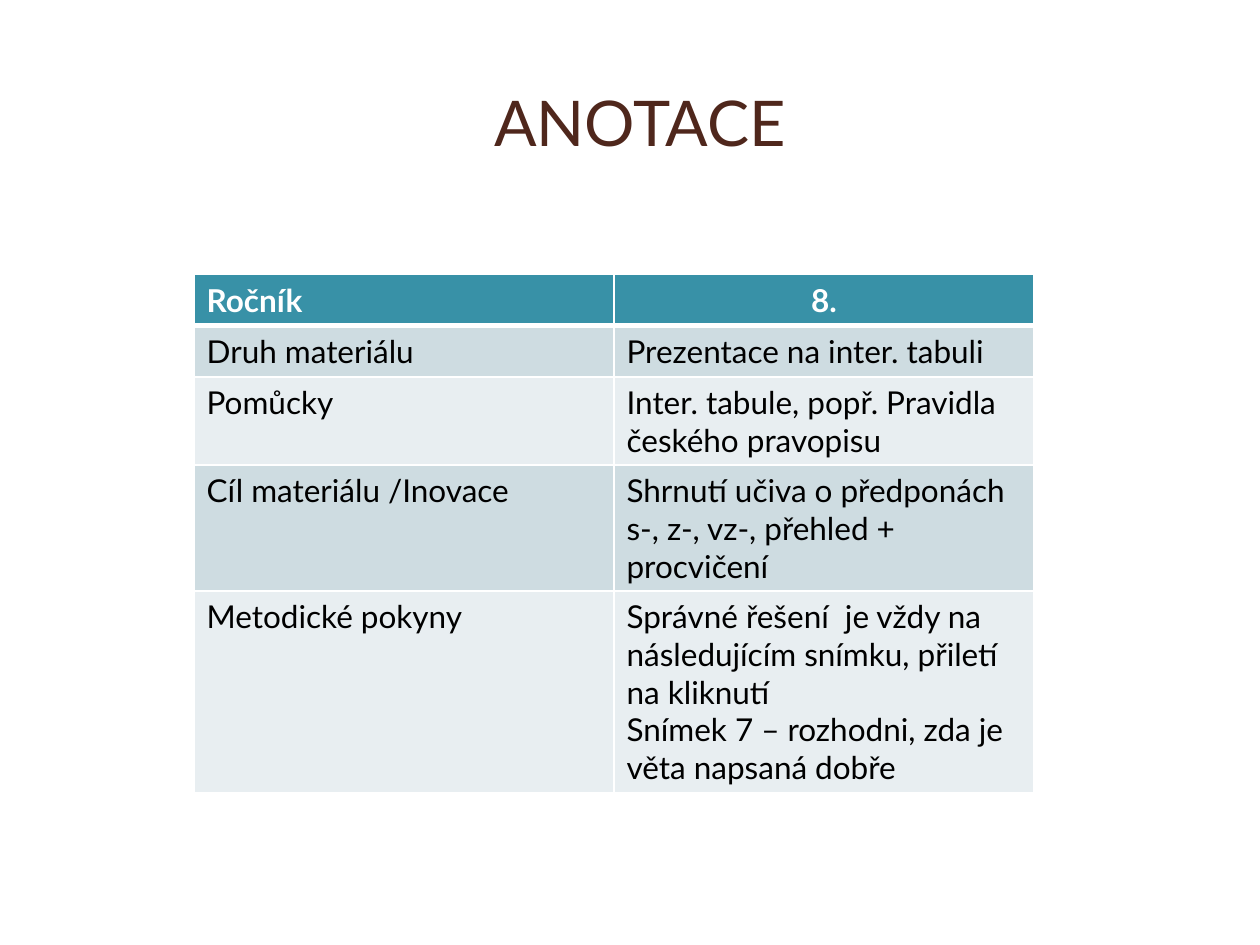
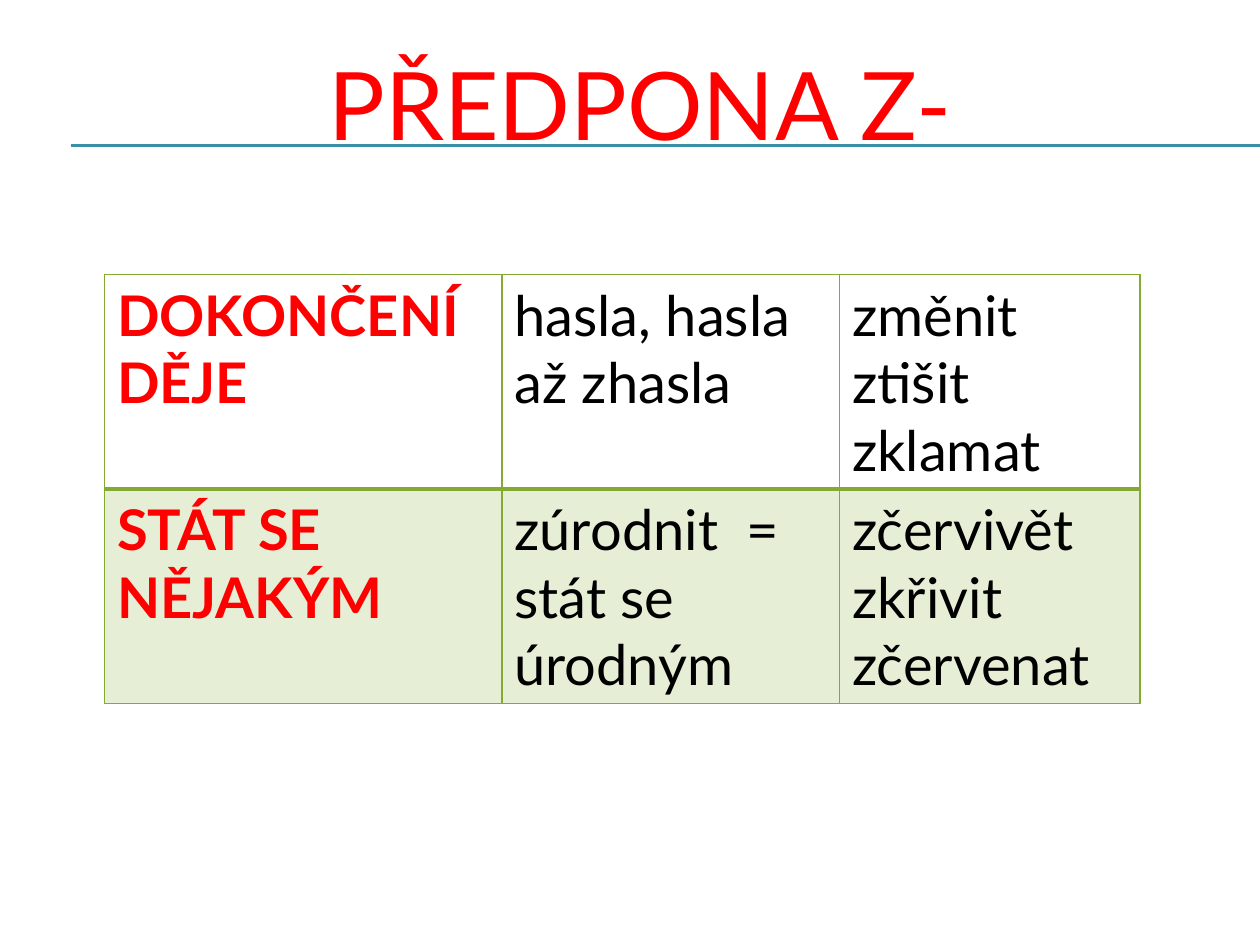
from lxml import etree
from pptx import Presentation
from pptx.dml.color import RGBColor
from pptx.enum.shapes import MSO_CONNECTOR
from pptx.enum.text import MSO_ANCHOR, PP_ALIGN
from pptx.oxml.ns import qn
from pptx.util import Pt

CENTER, LEFT = PP_ALIGN.CENTER, PP_ALIGN.LEFT
MIDDLE = MSO_ANCHOR.MIDDLE
STRAIGHT = MSO_CONNECTOR.STRAIGHT

FONT = "Lato"
WHITE = RGBColor(0xFF, 0xFF, 0xFF)
BLACK = RGBColor(0x00, 0x00, 0x00)
RED = RGBColor(0xFF, 0x00, 0x00)
BROWN = RGBColor(0x4F, 0x27, 0x1C)
TEAL = RGBColor(0x38, 0x91, 0xA7)
BAND_DARK = RGBColor(0xCE, 0xDC, 0xE1)
BAND_LIGHT = RGBColor(0xE8, 0xEE, 0xF1)
GREEN = RGBColor(0x84, 0xAA, 0x33)

deck = Presentation()
deck.slide_width, deck.slide_height = Pt(720), Pt(540)
blank = deck.slide_layouts[6]
annotation_page = deck.slides.add_slide(blank)
prefix_page = deck.slides.add_slide(blank)


def write(frame, text, size, color, bold=False, align=LEFT):
    frame.text = text
    frame.word_wrap = True
    for para in frame.paragraphs:
        para.alignment = align
        for span in para.runs:
            span.font.name = FONT
            span.font.size = Pt(size)
            span.font.bold = bold
            span.font.color.rgb = color


def add_plain_table(page, left, top, widths, heights, line_color, divider):
    """Add an unbanded table with 1 pt borders and a thicker line under the first row."""
    frame = page.shapes.add_table(len(heights), len(widths), Pt(left), Pt(top),
                                  Pt(sum(widths)), Pt(sum(heights)))
    table = frame.table
    table.first_row = table.horz_banding = False
    for column, width in zip(table.columns, widths):
        column.width = Pt(width)
    for row_index, height in enumerate(heights):
        table.rows[row_index].height = Pt(height)
        for cell in table.rows[row_index].cells:
            cell.fill.background()
            properties = cell._tc.get_or_add_tcPr()
            for position, side in enumerate(("lnL", "lnR", "lnT", "lnB")):
                thick = (row_index, side) in ((0, "lnB"), (1, "lnT"))
                border = etree.Element(qn("a:" + side), w=str(Pt(divider if thick else 1)))
                fill = etree.SubElement(border, qn("a:solidFill"))
                etree.SubElement(fill, qn("a:srgbClr"), val=str(line_color))
                properties.insert(position, border)
    return table


# Lines in the page background of the second slide
for y in (82.8, 83.52):
    rule = prefix_page.shapes.add_connector(STRAIGHT, Pt(40.32), Pt(y), Pt(720), Pt(y))
    rule.line.color.rgb = TEAL
    rule.line.width = Pt(0.75)
    etree.SubElement(rule._element.spPr, qn("a:effectLst"))

# Titles
for page, title, top, height, size, color in (
    (annotation_page, "ANOTACE", 36, 66.24, 36, BROWN),
    (prefix_page, "PŘEDPONA Z-", 15.12, 87.12, 54, RED),
):
    box = page.shapes.add_textbox(Pt(23.76), Pt(top), Pt(684), Pt(height))
    box.text_frame.vertical_anchor = MIDDLE
    write(box.text_frame, title, size, color, align=CENTER)

# Annotation table
annotation_rows = [
    ("Ročník", "8."),
    ("Druh materiálu", "Prezentace na inter. tabuli"),
    ("Pomůcky", "Inter. tabule, popř. Pravidla českého pravopisu"),
    ("Cíl materiálu /Inovace",
     "Shrnutí učiva o předponách s-, z-, vz-, přehled + procvičení"),
    ("Metodické pokyny",
     "Správné řešení  je vždy na následujícím snímku, přiletí na kliknutí\n"
     "Snímek 7 – rozhodni, zda je věta napsaná dobře"),
]
table = add_plain_table(annotation_page, 110.88, 156.96, [240, 240],
                        [29.2, 29.2, 50.4, 72, 115.2], WHITE, 3)
for row_index, texts in enumerate(annotation_rows):
    header = row_index == 0
    band = TEAL if header else (BAND_LIGHT, BAND_DARK)[row_index % 2]
    for column_index, text in enumerate(texts):
        cell = table.cell(row_index, column_index)
        cell.fill.solid()
        cell.fill.fore_color.rgb = band
        write(cell.text_frame, text, 18, WHITE if header else BLACK, header,
              CENTER if header and column_index == 1 else LEFT)

# Prefix table
prefix_rows = [
    ("DOKONČENÍ DĚJE", "hasla, hasla až zhasla", "změnit\nztišit\nzklamat"),
    ("STÁT SE  NĚJAKÝM", "zúrodnit  = stát se úrodným", "zčervivět\nzkřivit\nzčervenat"),
]
table = add_plain_table(prefix_page, 59.76, 156.96, [227, 193, 171.6],
                        [122.4, 122.4], GREEN, 2)
for row_index, texts in enumerate(prefix_rows):
    for column_index, text in enumerate(texts):
        cell = table.cell(row_index, column_index)
        meaning = column_index == 0
        write(cell.text_frame, text, 32, RED if meaning else BLACK, meaning)
        if row_index == 1:
            cell.fill.solid()
            cell.fill.fore_color.rgb = GREEN
            tint = cell._tc.tcPr.find(qn("a:solidFill")).find(qn("a:srgbClr"))
            etree.SubElement(tint, qn("a:alpha"), val="20000")

deck.save("out.pptx")
